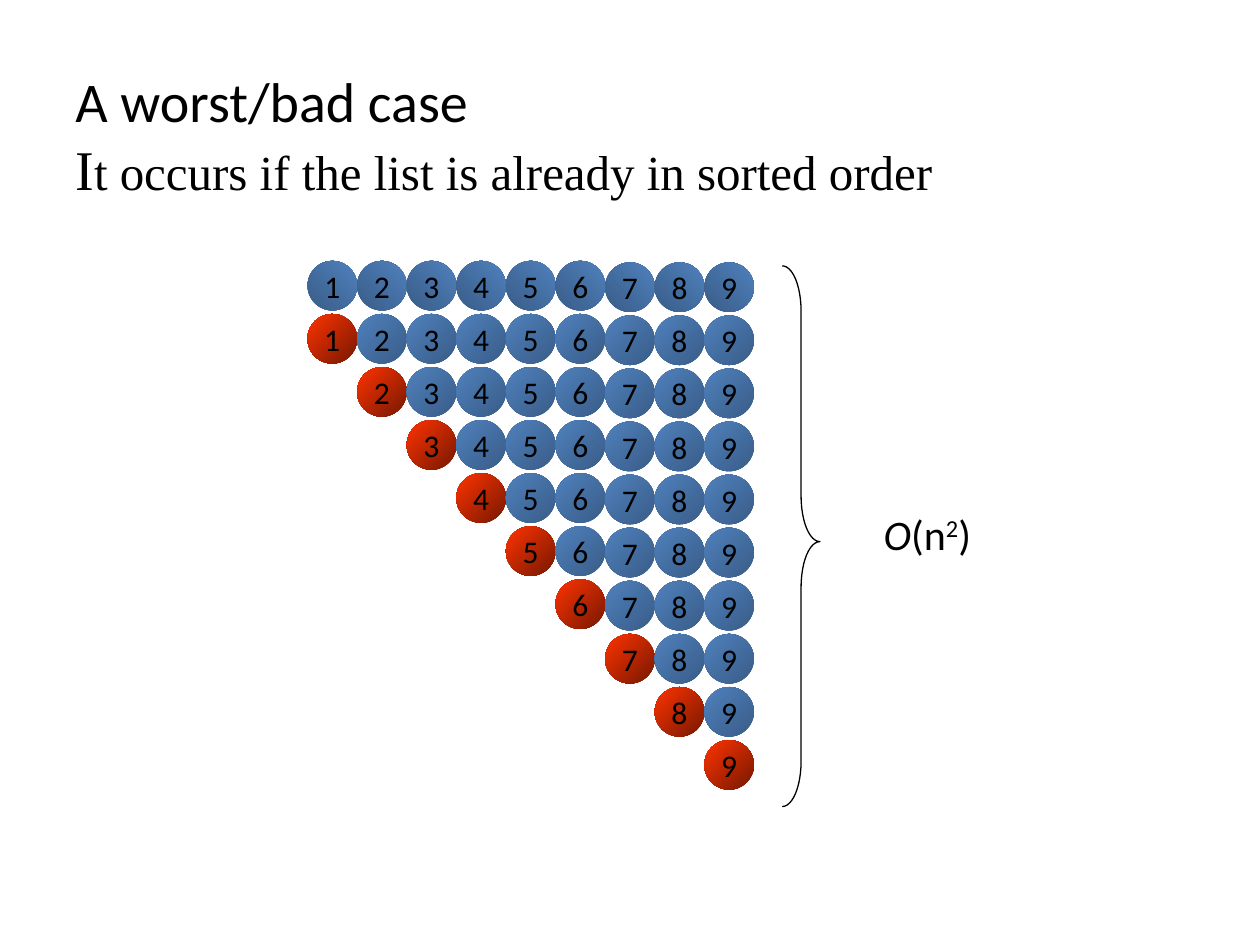
import pptx
import pptx.util
import pptx.dml.color
import pptx.enum.shapes
import pptx.enum.text
from dataclasses import dataclass

Cm = pptx.util.Cm
Shape = pptx.enum.shapes.MSO_SHAPE
Middle = pptx.enum.text.MSO_ANCHOR.MIDDLE
Center = pptx.enum.text.PP_ALIGN.CENTER


@dataclass(frozen=True)
class Theme:
    text: str = "000000"
    paper: str = "FFFFFF"
    unsorted: tuple = ("395C87", "4F81BD")
    pivot: tuple = ("761800", "FF3300")
    sans: str = "Calibri"
    serif: str = "Times New Roman"
    title_size: int = 32
    subtitle_size: int = 28
    formula_size: int = 24
    number_size: int = 18
    line_width: float = 0.75


theme = Theme()


def rgb(value):
    return pptx.dml.color.RGBColor.from_string(value)


def add_run(paragraph, text, size, font=theme.sans):
    run = paragraph.add_run()
    run.text = text
    run.font.size = pptx.util.Pt(size)
    run.font.name = font
    run.font.color.rgb = rgb(theme.text)
    return run


deck = pptx.Presentation()
deck.slide_width, deck.slide_height = Cm(25.4), Cm(19.05)
slide = deck.slides.add_slide(deck.slide_layouts[6])

# Heading
heading = slide.shapes.add_textbox(Cm(1.27), Cm(0.76), Cm(22.86), Cm(3.89))
heading.text_frame.word_wrap = True
heading.text_frame.vertical_anchor = Middle
heading_lines = heading.text_frame.paragraphs[0]
add_run(heading_lines, "A worst/bad case", theme.title_size)
heading_lines.add_line_break()
add_run(heading_lines, "I", theme.title_size, theme.serif)
add_run(heading_lines, "t occurs if the list is already in sorted order",
        theme.subtitle_size, theme.serif)

# Partition steps: the full list, then each step starts at its pivot
count = 9
diameter = column_pitch = 1.0
row_pitch = 1.07
grid_left, grid_top = 6.2, 5.26
for step in range(count + 1):
    for number in range(max(step, 1), count + 1):
        drop = 0.03 if number >= 7 else 0
        ball = slide.shapes.add_shape(
            Shape.OVAL,
            Cm(grid_left + (number - 1) * column_pitch),
            Cm(grid_top + step * row_pitch + drop),
            Cm(diameter), Cm(diameter))
        ball.shadow.inherit = False
        ball.line.fill.background()
        ball.fill.gradient()
        ball.fill.gradient_angle = 45
        shades = theme.pivot if number == step else theme.unsorted
        for stop, shade in zip(ball.fill.gradient_stops, shades):
            stop.color.rgb = rgb(shade)
        if step > 0:  # mirror the shading below the first row
            ball._element.spPr.xfrm.set("flipH", "1")
        ball.text_frame.word_wrap = False
        ball.text_frame.vertical_anchor = Middle
        label = ball.text_frame.paragraphs[0]
        label.alignment = Center
        add_run(label, str(number), theme.number_size)

# Brace around all steps
brace = slide.shapes.add_shape(
    Shape.RIGHT_BRACE, Cm(15.77), Cm(5.36), Cm(0.76), Cm(10.9))
brace.shadow.inherit = False
brace.adjustments[0] = 1.2
brace.adjustments[1] = 0.51
brace.fill.background()
brace.line.color.rgb = rgb(theme.text)
brace.line.width = pptx.util.Pt(theme.line_width)

# Total cost
cost = slide.shapes.add_shape(
    Shape.RECTANGLE, Cm(16.79), Cm(9.68), Cm(3.81), Cm(2.16))
cost.shadow.inherit = False
cost.fill.solid()
cost.fill.fore_color.rgb = rgb(theme.paper)
cost.line.color.rgb = rgb(theme.paper)
cost.line.width = pptx.util.Pt(theme.line_width)
cost.text_frame.word_wrap = False
cost.text_frame.vertical_anchor = Middle
formula = cost.text_frame.paragraphs[0]
formula.alignment = Center
add_run(formula, "O", theme.formula_size).font.italic = True
add_run(formula, "(n", theme.formula_size)
exponent = add_run(formula, "2", theme.formula_size)
exponent._r.get_or_add_rPr().set("baseline", "30000")
add_run(formula, ")", theme.formula_size)

deck.save("out.pptx")
